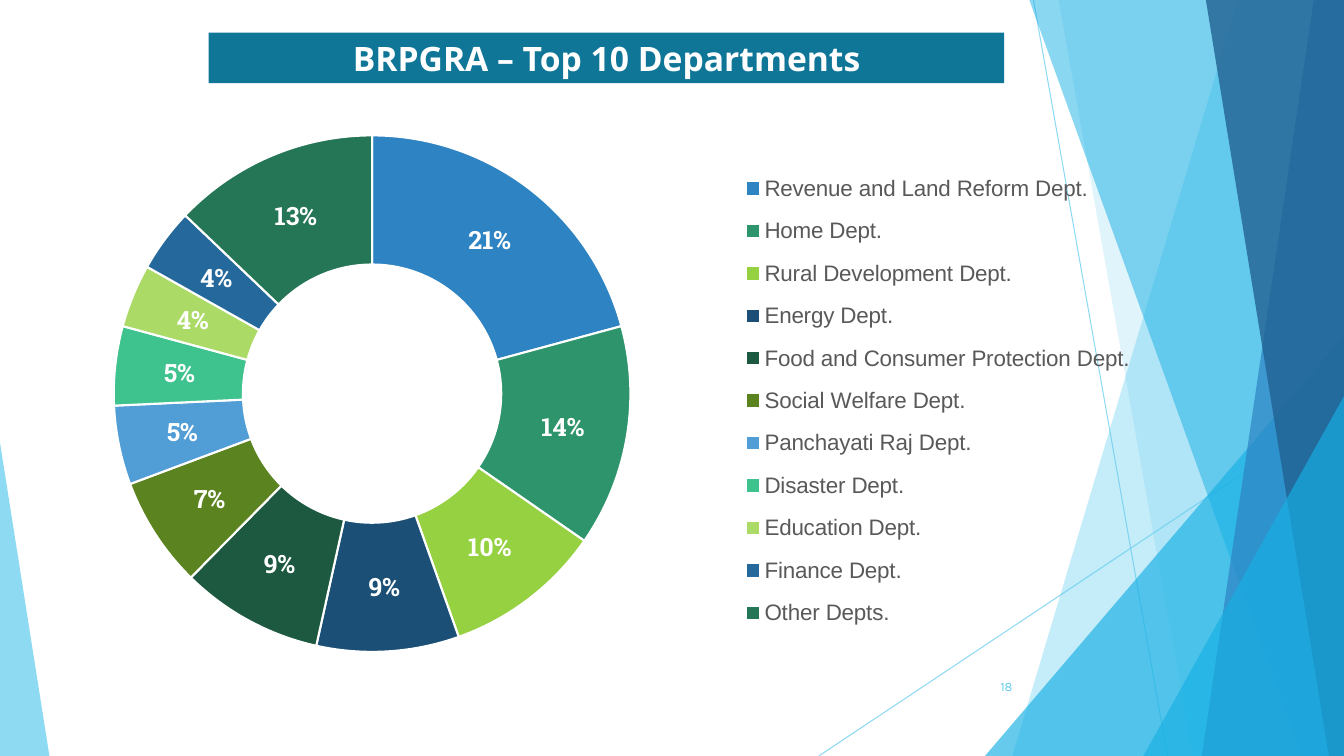
"""Build the slide with a doughnut chart of the top ten departments."""
from dataclasses import dataclass
from typing import Any

import lxml.etree
import pptx
import pptx.chart.data
import pptx.dml.color
import pptx.enum.chart
import pptx.enum.shapes
import pptx.enum.text
import pptx.oxml
import pptx.oxml.ns
import pptx.util

WIDE, HIGH = pptx.util.Inches(13.33), pptx.util.Inches(7.5)
HUES = {
    "sky": "5FCBEF", "cyan": "17B0E4", "blue": "2E83C3", "navy": "226292",
    "teal": "0F7698", "white": "FFFFFF", "black": "000000", "grey": "595959",
}


@dataclass
class Box:
    left: float
    top: float
    width: float
    height: float

    def place(self) -> tuple[int, int, int, int]:
        return across(self.left), down(self.top), across(self.width), down(self.height)


@dataclass
class Ray:
    start: tuple[float, float]
    end: tuple[float, float]


@dataclass
class Band:
    top: float
    base: float
    hue: str
    alpha: int


@dataclass
class Wedge:
    box: Box
    apex: int
    hue: str
    alpha: int


@dataclass
class Slice:
    name: str
    value: int
    hue: str


RAYS = [Ray((76.9, 0), (86.87, 100)), Ray((100, 53.73), (60.92, 100))]
DECOR = [
    Band(92.12, 75.32, "sky", 36),
    Band(78.77, 88.75, "sky", 20),
    Wedge(Box(73.29, 44.4, 26.71, 55.6), 1, "cyan", 66),
    Band(76.59, 96.85, "cyan", 50),
    Band(97.75, 89.42, "blue", 70),
    Band(89.72, 98.87, "navy", 80),
    Wedge(Box(85.07, 52.4, 14.93, 47.6), 1, "cyan", 66),
    Wedge(Box(0, 58.53, 3.68, 41.47), 0, "sky", 70),
]
SLICES = [
    Slice("Revenue and Land Reform Dept.", 21, "2E83C3"),
    Slice("Home Dept.", 14, "2E946B"),
    Slice("Rural Development Dept.", 10, "96D141"),
    Slice("Energy Dept.", 9, "1C4F75"),
    Slice("Food and Consumer Protection Dept.", 9, "1C5940"),
    Slice("Social Welfare Dept.", 7, "5B8420"),
    Slice("Panchayati Raj Dept.", 5, "519DD6"),
    Slice("Disaster Dept.", 5, "3EC38E"),
    Slice("Education Dept.", 4, "ABDA67"),
    Slice("Finance Dept.", 4, "25699C"),
    Slice("Other Depts.", 13, "257656"),
]
CHART = Box(6.15, 14.93, 82.67, 74.67)
RING = Box(0.012, 0.04, 0.497, 0.915)
KEY = Box(0.57, 0.08, 0.4, 0.86)
TITLE = Box(15.53, 4.33, 59.19, 6.67)
PAGE = Box(70.44, 88.13, 5.63, 5.33)


def across(share: float) -> int:
    return round(WIDE * share / 100)


def down(share: float) -> int:
    return round(HIGH * share / 100)


def tint(code: str) -> pptx.dml.color.RGBColor:
    return pptx.dml.color.RGBColor.from_string(code)


def fade(shape: Any, alpha: int) -> None:
    tone = next(shape._element.spPr.iter(pptx.oxml.ns.qn("a:srgbClr")))
    lxml.etree.SubElement(tone, pptx.oxml.ns.qn("a:alpha"), val=str(alpha * 1000))


def paint(shape: Any, hue: str, alpha: int = 100) -> None:
    shape.shadow.inherit = False
    shape.fill.solid()
    shape.fill.fore_color.rgb = tint(HUES[hue])
    shape.line.fill.background()
    if alpha < 100:
        fade(shape, alpha)


def style(font: Any, face: str, size: float, hue: str, bold: bool = False) -> None:
    font.name, font.size, font.bold = face, pptx.util.Pt(size), bold
    font.color.rgb = tint(HUES[hue])


def write(shape: Any, text: str, *, face: str, size: float, hue: str,
          bold: bool = False, align: str = "CENTER") -> None:
    frame = shape.text_frame
    frame.word_wrap = True
    frame.vertical_anchor = pptx.enum.text.MSO_ANCHOR.MIDDLE
    para = frame.paragraphs[0]
    para.alignment = pptx.enum.text.PP_ALIGN[align]
    run = para.add_run()
    run.text = text
    style(run.font, face, size, hue, bold)


def draw_ray(shapes: Any, ray: Ray) -> None:
    (left, top), (right, base) = ray.start, ray.end
    line = shapes.add_connector(pptx.enum.shapes.MSO_CONNECTOR.STRAIGHT,
                                across(left), down(top), across(right), down(base))
    line.line.color.rgb = tint(HUES["sky"])
    line.line.width = pptx.util.Pt(0.75)
    fade(line, 70)
    lxml.etree.SubElement(line._element.spPr, pptx.oxml.ns.qn("a:effectLst"))


def draw_band(shapes: Any, band: Band) -> None:
    pen = shapes.build_freeform(across(band.top), 0)
    pen.add_line_segments([(WIDE, 0), (WIDE, HIGH), (across(band.base), HIGH)])
    paint(pen.convert_to_shape(), band.hue, band.alpha)


def draw_wedge(shapes: Any, wedge: Wedge) -> None:
    kind = pptx.enum.shapes.MSO_SHAPE.ISOSCELES_TRIANGLE
    shape = shapes.add_shape(kind, *wedge.box.place())
    shape.adjustments[0] = wedge.apex
    paint(shape, wedge.hue, wedge.alpha)


def arrange(host: Any, index: int, box: Box, inner: bool = False) -> None:
    for old in host.findall(pptx.oxml.ns.qn("c:layout")):
        host.remove(old)
    root = pptx.oxml.parse_xml(f"<c:layout {pptx.oxml.ns.nsdecls('c')}><c:manualLayout/></c:layout>")
    pairs = [("layoutTarget", "inner")] if inner else []
    pairs += [("xMode", "edge"), ("yMode", "edge"), ("x", box.left),
              ("y", box.top), ("w", box.width), ("h", box.height)]
    for name, value in pairs:
        lxml.etree.SubElement(root[0], pptx.oxml.ns.qn(f"c:{name}"), val=str(value))
    host.insert(index, root)


def draw_chart(shapes: Any) -> None:
    data = pptx.chart.data.CategoryChartData()
    data.categories = [part.name for part in SLICES]
    data.add_series("Series 1", [part.value for part in SLICES])
    kind = pptx.enum.chart.XL_CHART_TYPE.DOUGHNUT
    chart = shapes.add_chart(kind, *CHART.place(), data).chart
    chart.has_title = False
    style(chart.font, "Karla", 10, "black")
    chart.has_legend = True
    chart.legend.position = pptx.enum.chart.XL_LEGEND_POSITION.RIGHT
    chart.legend.include_in_layout = False
    style(chart.legend.font, "Arial", 16, "grey")
    arrange(chart.legend._element, 1, KEY)
    space = chart._chartSpace
    arrange(space.chart.plotArea, 0, RING, inner=True)
    space.chart.addnext(pptx.oxml.parse_xml(
        f"<c:spPr {pptx.oxml.ns.nsdecls('c', 'a')}><a:noFill/><a:ln><a:noFill/></a:ln></c:spPr>"))
    plot = chart.plots[0]
    plot.vary_by_categories = True
    for index, part in enumerate(SLICES):
        look = plot.series[0].points[index].format
        look.fill.solid()
        look.fill.fore_color.rgb = tint(part.hue)
        look.line.color.rgb = tint(HUES["white"])
        look.line.width = pptx.util.Pt(1.5)
    tags = plot.series[0].data_labels
    tags.show_value, tags.show_percentage = False, True
    tags.number_format, tags.number_format_is_linked = "0%", False
    style(tags.font, "Roboto Slab", 18, "white", bold=True)


def main() -> None:
    deck = pptx.Presentation()
    deck.slide_width, deck.slide_height = WIDE, HIGH
    shapes = deck.slides.add_slide(deck.slide_layouts[6]).shapes
    for ray in RAYS:
        draw_ray(shapes, ray)
    for item in DECOR:
        (draw_band if isinstance(item, Band) else draw_wedge)(shapes, item)
    draw_chart(shapes)
    title = shapes.add_shape(pptx.enum.shapes.MSO_SHAPE.RECTANGLE, *TITLE.place())
    paint(title, "teal")
    write(title, "BRPGRA – Top 10 Departments", face="Noto Sans", size=24, hue="white", bold=True)
    write(shapes.add_textbox(*PAGE.place()), "18", face="Karla", size=9, hue="sky", align="RIGHT")
    deck.save("out.pptx")


if __name__ == "__main__":
    main()
